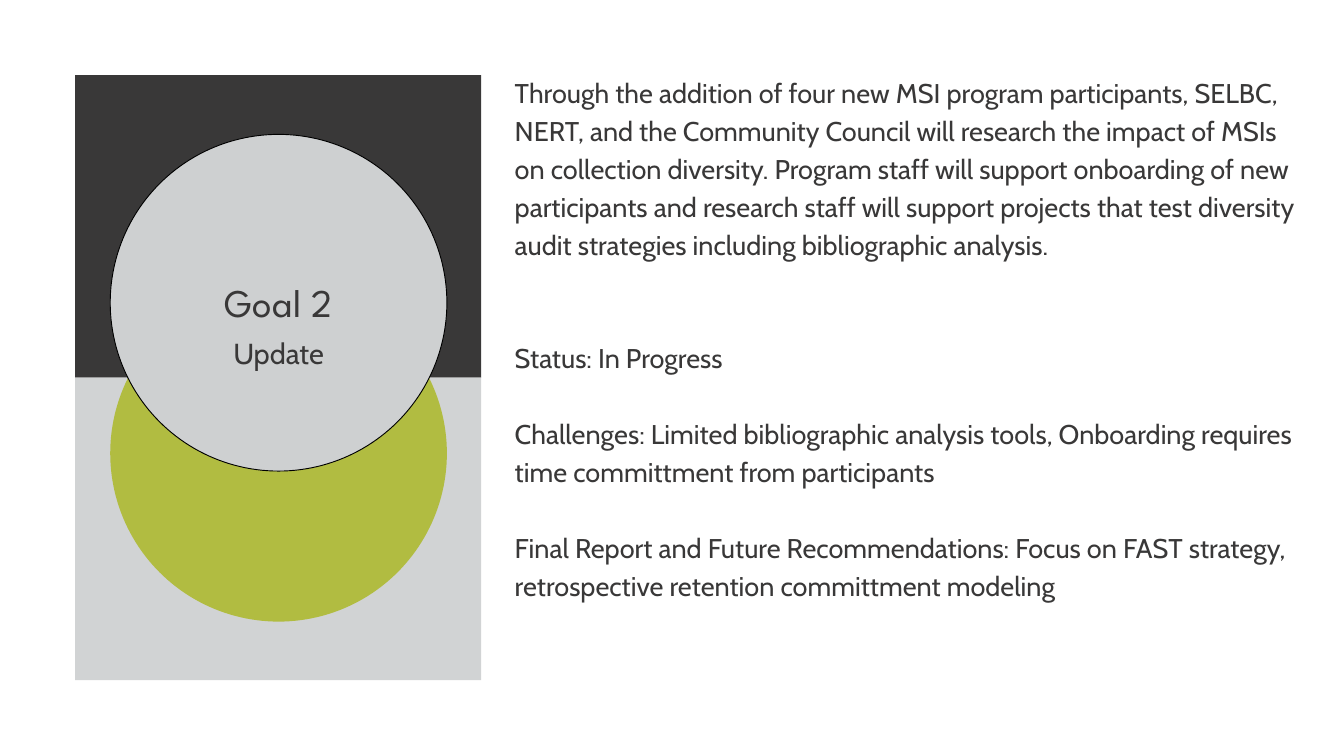
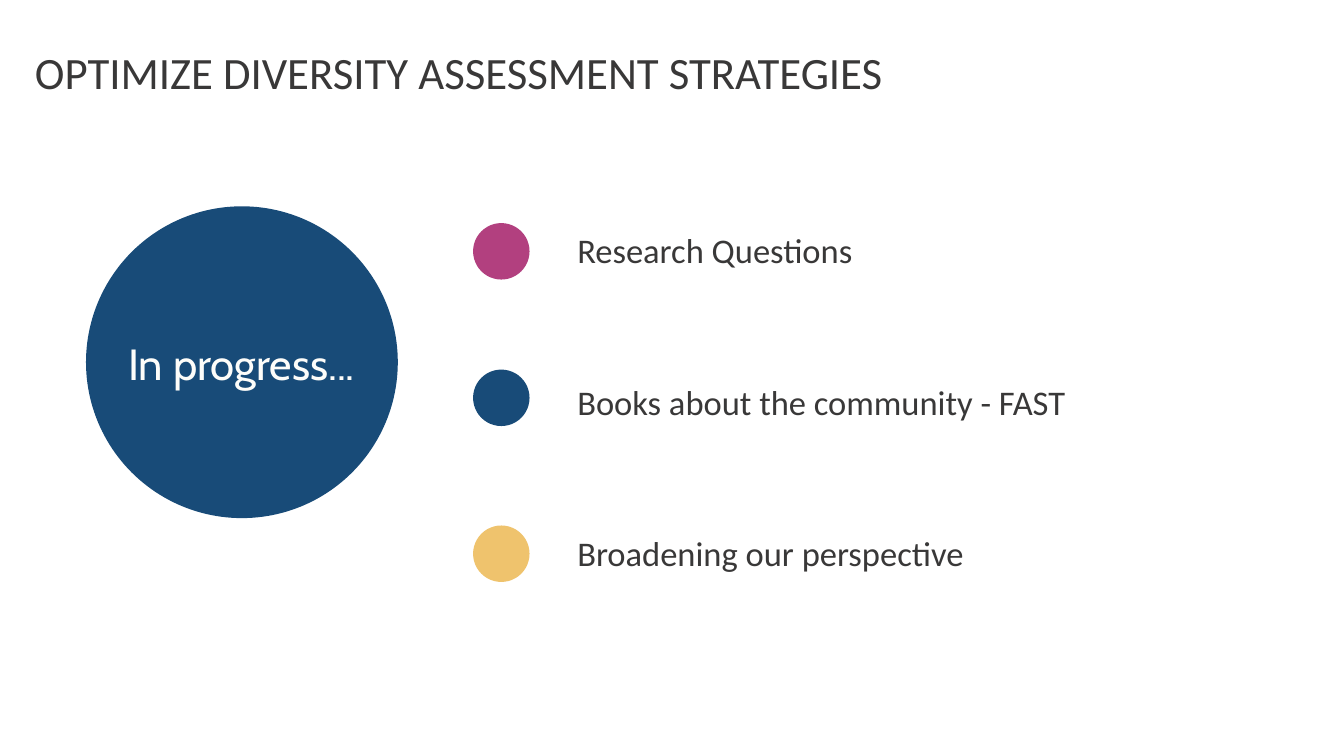
from dataclasses import dataclass

from lxml.etree import SubElement
from pptx import Presentation
from pptx.dml.color import RGBColor
from pptx.enum.shapes import MSO_SHAPE
from pptx.enum.text import MSO_ANCHOR, MSO_AUTO_SIZE, PP_ALIGN
from pptx.oxml.ns import qn
from pptx.util import Inches, Pt


@dataclass(frozen=True)
class TextStyle:
    font: str
    size: float
    leading: float
    color: str = "393838"
    align: PP_ALIGN = PP_ALIGN.LEFT


@dataclass(frozen=True)
class Theme:
    # Colours
    charcoal: str = "393838"
    panel_gray: str = "D1D3D4"
    circle_gray: str = "CED0D1"
    outline: str = "000000"
    green: str = "B1BC41"
    magenta: str = "B2407F"
    navy: str = "184B78"
    gold: str = "EFC36D"
    # Type
    heading: TextStyle = TextStyle("Calibri", 48, 57.6)
    topic: TextStyle = TextStyle("Calibri", 37, 38.8)
    goal: TextStyle = TextStyle("League Spartan", 42, 58.8, align=PP_ALIGN.CENTER)
    subtitle: TextStyle = TextStyle("Cabin", 31, 43.4, align=PP_ALIGN.CENTER)
    report: TextStyle = TextStyle("Cabin", 29, 40.6)
    progress: TextStyle = TextStyle("Cabin", 46.7, 65.3, "FDFDFA", PP_ALIGN.CENTER)


THEME = Theme()
TITLE_AND_CONTENT, TITLE_ONLY = 1, 5

# Each report paragraph with the number of lines left free above it
REPORT = [
    ("Through the addition of four new MSI program participants, SELBC, "
     "NERT, and the Community Council will research the impact of MSIs on "
     "collection diversity. Program staff will support onboarding of new "
     "participants and research staff will support projects that test diversity "
     "audit strategies including bibliographic analysis.", 0),
    ("Status: In Progress", 2),
    ("Challenges: Limited bibliographic analysis tools, Onboarding requires "
     "time committment from participants", 1),
    ("Final Report and Future Recommendations: Focus on FAST strategy, "
     "retrospective retention committment modeling", 1),
]

# Each topic with its dot colour and the top of its dot
TOPICS = [
    ("Research Questions", THEME.magenta, 3.32),
    ("Books about the community - FAST", THEME.navy, 5.5),
    ("Broadening our perspective", THEME.gold, 7.82),
]


def set_attributes(target, values):
    for name, value in values.items():
        setattr(target, name, value)


def place(shape, left, top, width, height):
    set_attributes(shape, {"left": Inches(left), "top": Inches(top),
                           "width": Inches(width), "height": Inches(height)})


def write(shape, paragraphs, style):
    """Fill a shape with (text, free lines above) pairs in one style."""
    frame = shape.text_frame
    set_attributes(frame, {
        "margin_left": 0, "margin_top": 0, "margin_right": 0, "margin_bottom": 0,
        "word_wrap": True, "auto_size": MSO_AUTO_SIZE.NONE,
        "vertical_anchor": MSO_ANCHOR.TOP})
    for index, (text, free_lines) in enumerate(paragraphs):
        paragraph = frame.add_paragraph() if index else frame.paragraphs[0]
        set_attributes(paragraph, {
            "alignment": style.align, "line_spacing": Pt(style.leading),
            "space_before": Pt(free_lines * style.leading), "space_after": Pt(0)})
        run = paragraph.add_run()
        run.text = text
        set_attributes(run.font, {"name": style.font, "size": Pt(style.size)})
        run.font.color.rgb = RGBColor.from_string(style.color)


def fill_placeholder(placeholder, box, paragraphs, style):
    """Move a placeholder to the front and write it without bullets."""
    place(placeholder, *box)
    write(placeholder, paragraphs, style)
    for paragraph in placeholder.text_frame.paragraphs:
        properties = paragraph._p.get_or_add_pPr()
        properties.set("marL", "0")
        properties.set("indent", "0")
        SubElement(properties, qn("a:buNone"))
    element = placeholder._element
    element.getparent().append(element)


def add_text(slide, box, text, style):
    textbox = slide.shapes.add_textbox(*map(Inches, box))
    write(textbox, [(text, 0)], style)


def add_block(slide, kind, box, color, outline=None):
    block = slide.shapes.add_shape(kind, *map(Inches, box))
    block.shadow.inherit = False
    block.fill.solid()
    block.fill.fore_color.rgb = RGBColor.from_string(color)
    if outline:
        block.line.color.rgb = RGBColor.from_string(outline)
        block.line.width = Pt(1)
    else:
        block.line.fill.background()


def add_circle(slide, left, top, diameter, color, outline=None):
    add_block(slide, MSO_SHAPE.OVAL, (left, top, diameter, diameter), color, outline)


def build_goal_slide(deck):
    slide = deck.slides.add_slide(deck.slide_layouts[TITLE_AND_CONTENT])
    # Two stacked panels with overlapping circles
    panel_top, panel_height = 1.12, 4.5
    for row, color in enumerate((THEME.charcoal, THEME.panel_gray)):
        add_block(slide, MSO_SHAPE.RECTANGLE,
                  (1.12, panel_top + row * panel_height, 6.04, panel_height), color)
    circle_left, diameter = 1.64, 5.01
    add_circle(slide, circle_left, 4.24, diameter, THEME.green)
    add_circle(slide, circle_left, 2, diameter, THEME.circle_gray, THEME.outline)
    # Goal name and report
    fill_placeholder(slide.shapes.title, (circle_left, 4.02, diameter, 0.79),
                     [("Goal 2", 0)], THEME.goal)
    add_text(slide, (circle_left, 4.91, diameter, 0.56), "Update", THEME.subtitle)
    fill_placeholder(slide.placeholders[1], (7.66, 1.06, 11.88, 8.8),
                     REPORT, THEME.report)


def build_progress_slide(deck):
    slide = deck.slides.add_slide(deck.slide_layouts[TITLE_ONLY])
    # Topics with their dots
    label_top, label_pitch = 3.48, 2.26
    for row, (topic, color, dot_top) in enumerate(TOPICS):
        add_circle(slide, 7.04, dot_top, 0.84, color)
        add_text(slide, (8.59, label_top + row * label_pitch, 10.28, 0.55),
                 topic, THEME.topic)
    # Heading and progress circle
    fill_placeholder(slide.shapes.title, (0.52, 0.67, 17.5, 0.78),
                     [("OPTIMIZE DIVERSITY ASSESSMENT STRATEGIES", 0)], THEME.heading)
    add_circle(slide, 1.28, 3.07, 4.64, THEME.navy)
    add_text(slide, (0.93, 4.88, 5.33, 0.88), "In progress...", THEME.progress)


def main():
    deck = Presentation()
    set_attributes(deck, {"slide_width": Inches(20), "slide_height": Inches(11.25)})
    build_goal_slide(deck)
    build_progress_slide(deck)
    deck.save("out.pptx")


if __name__ == "__main__":
    main()
